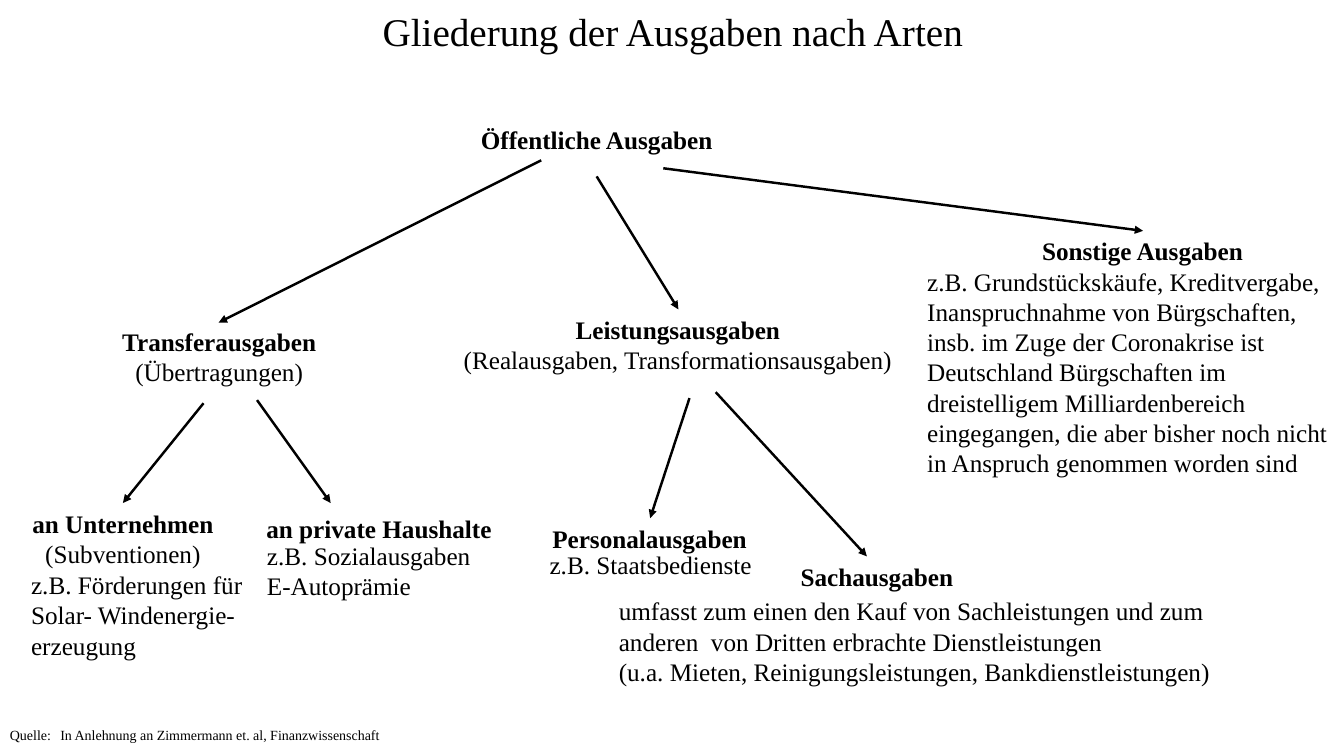
"""Build a slide with a tree of the types of public expenditure."""
from lxml.etree import SubElement
from pptx import Presentation
from pptx.dml.color import RGBColor
from pptx.enum.shapes import MSO_CONNECTOR
from pptx.enum.text import MSO_ANCHOR, MSO_AUTO_SIZE, PP_ALIGN
from pptx.oxml.ns import qn
from pptx.util import Pt

BLACK = RGBColor(0, 0, 0)
FONT = "Times New Roman"
LEFT, CENTER = PP_ALIGN.LEFT, PP_ALIGN.CENTER


def format_text(shape, text, size, alignment, bold_heading=False):
    shape.text_frame.text = text
    for index, paragraph in enumerate(shape.text_frame.paragraphs):
        paragraph.alignment = alignment
        for run in paragraph.runs:
            run.font.name = FONT
            run.font.size = Pt(size)
            run.font.bold = bold_heading and index == 0
            run.font.color.rgb = BLACK


def add_text(slide, box, text, size, alignment, wrap, bold_heading=False):
    shape = slide.shapes.add_textbox(*[Pt(length) for length in box])
    shape.text_frame.word_wrap = wrap
    format_text(shape, text, size, alignment, bold_heading)


presentation = Presentation()
presentation.slide_width = Pt(960)
presentation.slide_height = Pt(540)
slide = presentation.slides.add_slide(presentation.slide_layouts[5])

title = slide.shapes.title
title.left, title.top, title.width, title.height = Pt(1.4), Pt(0.7), Pt(958.3), Pt(42.5)
title.text_frame.auto_size = MSO_AUTO_SIZE.NONE
title.text_frame.vertical_anchor = MSO_ANCHOR.MIDDLE
format_text(title, "Gliederung der Ausgaben nach Arten", 28, CENTER)

headings = [
    ((335.5, 85, 181.4, 28.8), "Öffentliche Ausgaben", False),
    ((79.2, 229.7, 154.8, 51.1), "Transferausgaben\n(Übertragungen)", False),
    ((321.1, 221, 326.2, 51.1),
     "Leistungsausgaben\n(Realausgaben, Transformationsausgaben)", False),
    ((663.1, 164.9, 306, 28.8), "Sonstige Ausgaben", True),
    ((15.1, 359.3, 145.4, 51.1), "an Unternehmen\n(Subventionen)", False),
    ((182.2, 362.9, 177.1, 28.8), "an private Haushalte", False),
    ((386.6, 370.1, 154.8, 28.8), "Personalausgaben", False),
    ((541.4, 397.4, 169.9, 32.4), "Sachausgaben", True),
]
for box, text, wrap in headings:
    add_text(slide, box, text, 18, CENTER, wrap, bold_heading=True)

arrows = [
    (386.6, 114.5, 156.2, 230.4),
    (426.2, 126, 484.6, 221),
    (473.8, 120.2, 816.5, 164.9),
    (492.5, 284.4, 464.4, 370.1),
    (511.2, 280.1, 619.2, 397.4),
    (145.4, 288, 87.8, 359.3),
    (183.6, 285.8, 236.2, 359.3),
]
for ends in arrows:
    arrow = slide.shapes.add_connector(
        MSO_CONNECTOR.STRAIGHT, *[Pt(length) for length in ends])
    arrow.line.color.rgb = BLACK
    arrow.line.width = Pt(1.75)
    SubElement(arrow.line._get_or_add_ln(), qn("a:tailEnd"), type="triangle")
    SubElement(arrow._element.spPr, qn("a:effectLst"))

descriptions = [
    ((15.1, 403.2, 167, 72.7),
     "z.B. Förderungen für\nSolar- Windenergie-\nerzeugung", LEFT, False),
    ((183.6, 382.3, 161.3, 51.1), "z.B. Sozialausgaben\nE-Autoprämie", LEFT, False),
    ((384.5, 388.8, 160.6, 28.8), "z.B. Staatsbedienste", CENTER, False),
    ((434.9, 421.9, 447.8, 77),
     "umfasst zum einen den Kauf von Sachleistungen und zum anderen  von Dritten "
     "erbrachte Dienstleistungen\n"
     "(u.a. Mieten, Reinigungsleistungen, Bankdienstleistungen)", LEFT, True),
    ((655.2, 186.5, 304.6, 159.8),
     "z.B. Grundstückskäufe, Kreditvergabe,\n"
     "Inanspruchnahme von Bürgschaften,\n"
     "insb. im Zuge der Coronakrise ist Deutschland Bürgschaften im dreistelligem "
     "Milliardenbereich eingegangen, die aber bisher noch nicht in Anspruch "
     "genommen worden sind", LEFT, True),
]
for box, text, alignment, wrap in descriptions:
    add_text(slide, box, text, 18, alignment, wrap)

add_text(slide, (0, 515.5, 958.3, 20.9),
         "Quelle:\tIn Anlehnung an Zimmermann et. al, Finanzwissenschaft", 10, LEFT, True)

presentation.save("out.pptx")
